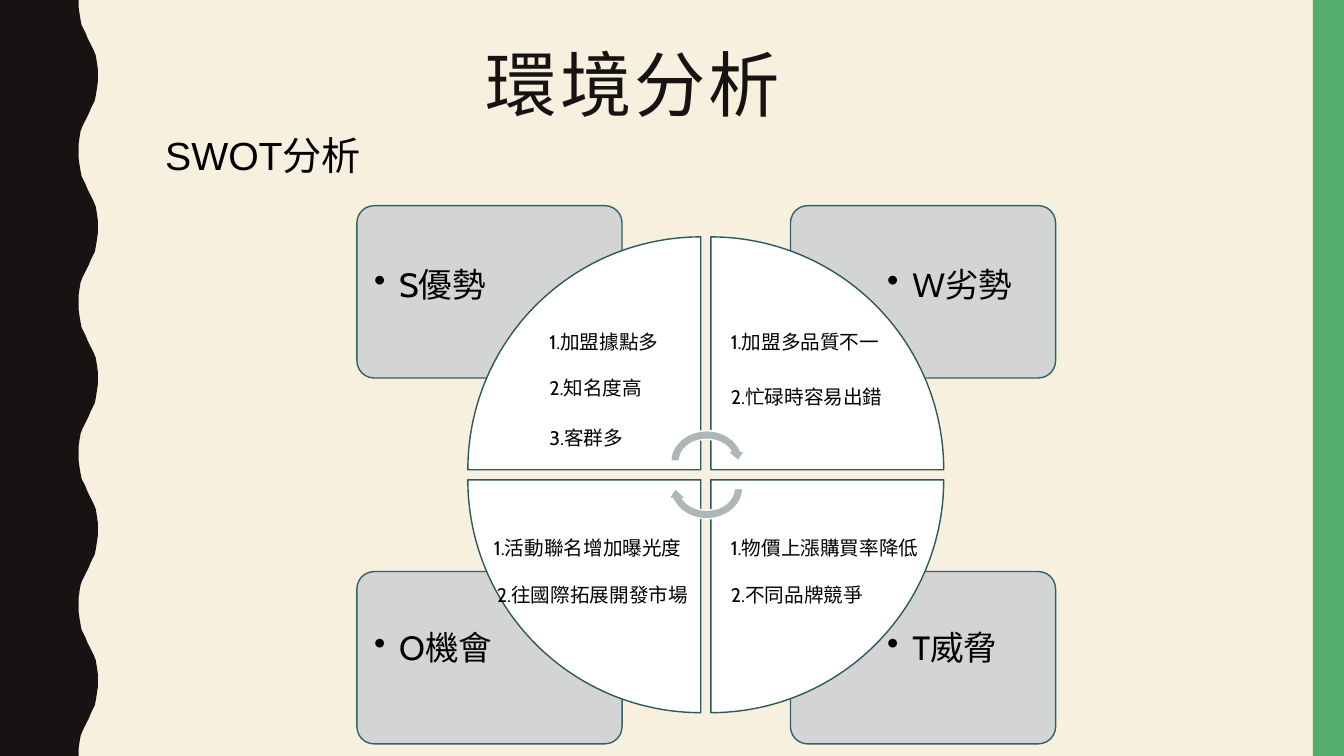
import lxml.etree
import pptx
import pptx.dml.color
import pptx.enum.shapes
import pptx.enum.text
import pptx.oxml.ns
import pptx.util

SCALE = 9144
SLIDE_WIDTH, SLIDE_HEIGHT = 1333, 750
SHAPES = pptx.enum.shapes.MSO_SHAPE
HALF_WAVE = [(78, 0), (78, 7), (79, 14), (80, 20), (81, 25), (83, 29), (85, 33), (87, 38),
             (89, 42), (91, 46), (93, 50), (95, 55), (96, 61), (97, 68), (97, 75)]
CARD_WIDTH, CARD_HEIGHT = 263, 171
WEDGE, WEDGE_GAP = 231, 10
QUADRANTS = [
    (0, 0, 0, "S優勢", [("1.加盟據點多", 71, 87, 148), ("2.知名度高", 71, 133, 139),
                      ("3.客群多", 71, 183, 105)]),
    (1, 0, 90, "W劣勢", [("1.加盟多品質不一", 10, 87, 204), ("2.忙碌時容易出錯", 10, 142, 178)]),
    (1, 1, 180, "T威脅", [("1.物價上漲購買率降低", 10, 51, 213), ("2.不同品牌競爭", 10, 97, 169)]),
    (0, 1, 270, "O機會", [("1.活動聯名增加曝光度", 16, 51, 220),
                        ("2.往國際拓展開發市場", 19, 97, 217)]),
]


def px(length):
    """Turn a length in px into EMU."""
    return pptx.util.Emu(round(length * SCALE))


def color(value):
    """Turn a hex string into a colour."""
    return pptx.dml.color.RGBColor.from_string(value)


def paint(shape, fill, line=None):
    """Give a shape a flat fill and an optional one-point outline."""
    shape.shadow.inherit = False
    shape.fill.solid()
    shape.fill.fore_color.rgb = color(fill)
    if line:
        shape.line.color.rgb = color(line)
        shape.line.width = pptx.util.Pt(1)
    else:
        shape.line.fill.background()


def add_shape(page, kind, box, fill, line=None, rotation=0):
    """Add a painted preset shape in the given box."""
    shape = page.shapes.add_shape(kind, *map(px, box))
    shape.rotation = rotation
    paint(shape, fill, line)
    return shape


def write(shape, text, size, font, shade="000000"):
    """Write one left-aligned, top-anchored line and return its paragraph."""
    frame = shape.text_frame
    frame.text = text
    frame.word_wrap = True
    frame.vertical_anchor = pptx.enum.text.MSO_ANCHOR.TOP
    para = frame.paragraphs[0]
    para.alignment = pptx.enum.text.PP_ALIGN.LEFT
    span = para.runs[0]
    span.font.size = pptx.util.Pt(size)
    span.font.name = font
    span.font.color.rgb = color(shade)
    return para


def add_text(page, box, text, size, font):
    """Add a text box and return it."""
    shape = page.shapes.add_textbox(*map(px, box))
    write(shape, text, size, font)
    return shape


def add_borders(page):
    """Draw the wavy left edge and the right stripe."""
    waves = SLIDE_HEIGHT // 75
    points = []
    for index in range(waves):
        for x, y in HALF_WAVE:
            points.append((x if index % 2 == 0 else 175 - x, index * 75 + y))
    builder = page.shapes.build_freeform(0, 0, scale=SCALE)
    builder.add_line_segments(points + [(0, SLIDE_HEIGHT)], close=True)
    paint(builder.convert_to_shape(), "171312")
    add_shape(page, SHAPES.RECTANGLE, (1302, 0, 31, SLIDE_HEIGHT), "53AE6E")


def add_heading(page, box):
    """Place the title and the subtitle under it."""
    left, top, width, height = box
    title = page.shapes.title
    title.left, title.top, title.width, title.height = map(px, box)
    para = write(title, "環境分析", 51, "Roboto Condensed", "171312")
    para.line_spacing = 0.9
    para.runs[0].font._element.set("spc", "200")
    title.text_frame.auto_size = pptx.enum.text.MSO_AUTO_SIZE.NONE
    add_text(page, (left - 318, top + 81, 231, 57), "SWOT分析", 28, "Arial")


def add_label(page, box, text):
    """Add a bulleted card label."""
    label = add_text(page, box, text, 24, "Cabin")
    frame = label.text_frame
    frame.margin_left = frame.margin_top = frame.margin_right = frame.margin_bottom = px(13)
    para = frame.paragraphs[0]
    para.line_spacing = 0.9
    props = para._p.get_or_add_pPr()
    props.set("marL", str(px(25)))
    props.set("indent", str(px(-25)))
    bullet = lxml.etree.SubElement(props, pptx.oxml.ns.qn("a:buChar"))
    bullet.set("char", "•")


def add_quadrant(page, box, column, row, rotation, label, items):
    """Draw one card with its label, wedge and findings inside the diagram box."""
    left, top, width, height = box
    card_left = left + column * (width - CARD_WIDTH)
    card_top = top + row * (height - CARD_HEIGHT)
    card = add_shape(page, SHAPES.ROUNDED_RECTANGLE,
                     (card_left, card_top, CARD_WIDTH, CARD_HEIGHT), "CED3D3", "326267")
    card.adjustments[0] = 0.1
    tint = card.fill._xPr.find(".//" + pptx.oxml.ns.qn("a:srgbClr"))
    lxml.etree.SubElement(tint, pptx.oxml.ns.qn("a:alpha")).set("val", "90000")
    add_label(page, (card_left + (83 if column else 4), card_top + (46 if row else 49), 177, 121),
              label)
    step = WEDGE + WEDGE_GAP
    wedge_left = left + (width - step - WEDGE) // 2 + column * step
    wedge_top = top + (height - step - WEDGE) // 2 + row * step
    add_shape(page, SHAPES.PIE_WEDGE, (wedge_left, wedge_top, WEDGE, WEDGE),
              "FFFFFF", "2D595D", rotation)
    for text, x, y, item_width in items:
        add_text(page, (wedge_left + x, wedge_top + y, item_width, 34), text, 14, "Cabin")


def add_swot(page, box):
    """Draw the four quadrants and the two arrows at their centre."""
    left, top, width, height = box
    for quadrant in QUADRANTS:
        add_quadrant(page, box, *quadrant)
    for offset, rotation in ((219, 0), (246, 180)):
        add_shape(page, SHAPES.CIRCULAR_ARROW,
                  (left + (width - 80) // 2 + 1, top + offset, 80, 69),
                  "AEB7B8", "FFFFFF", rotation)


def main():
    """Build the slide and save it."""
    deck = pptx.Presentation()
    deck.slide_width, deck.slide_height = px(SLIDE_WIDTH), px(SLIDE_HEIGHT)
    page = deck.slides.add_slide(deck.slide_layouts[5])
    page.background.fill.solid()
    page.background.fill.fore_color.rgb = color("F7F0DF")
    add_borders(page)
    add_heading(page, (472, 44, 1113, 163))
    add_swot(page, (354, 204, 693, 534))
    deck.save("out.pptx")


if __name__ == "__main__":
    main()
